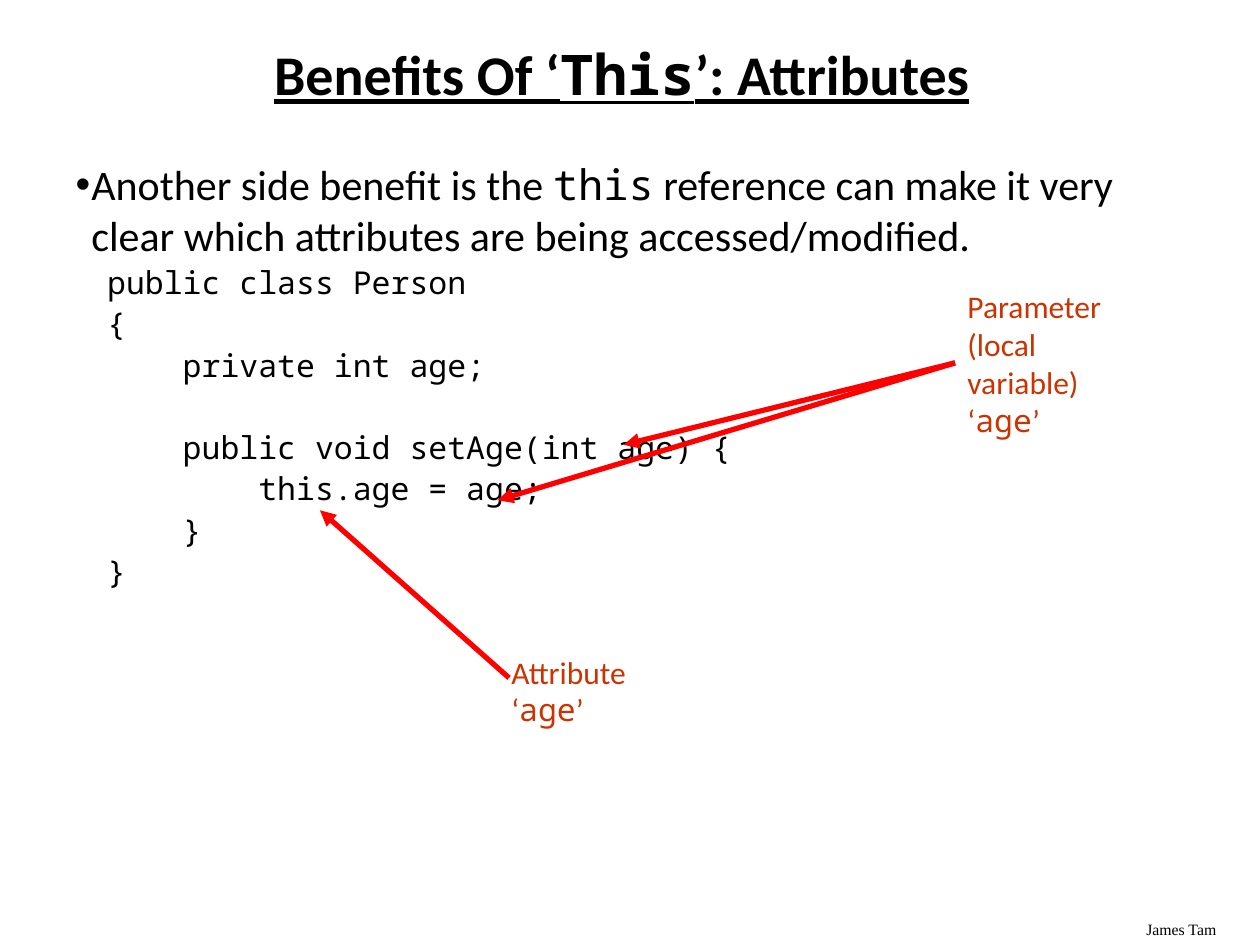
from dataclasses import dataclass

from lxml import etree
from pptx import Presentation
from pptx.dml.color import RGBColor
from pptx.enum import shapes, text
from pptx.oxml import ns
from pptx.util import Pt


@dataclass(frozen=True)
class Theme:
    sans: str = "Calibri"
    mono: str = "Noto Sans Mono"
    serif: str = "Times New Roman"
    ink: str = "000000"
    note: str = "CC3300"
    arrow: str = "FF0000"
    title: int = 32
    body: int = 24
    code: int = 18
    foot: int = 9


@dataclass(frozen=True)
class Box:
    x: float
    y: float
    w: float
    h: float


@dataclass(frozen=True)
class Label:
    text: str
    box: Box
    font: str
    size: int
    color: str


@dataclass(frozen=True)
class Arrow:
    x: float
    y: float
    tip_x: float
    tip_y: float


@dataclass(frozen=True)
class Code:
    text: str
    depth: int = 0
    gap: float = 2


THEME = Theme()
TAB = 43.2
HUB = (545.76, 207.36)

CODE = [
    Code("public class Person"),
    Code("{"),
    Code("private int age;", 1),
    Code("public void setAge(int age) {", 1, 25.5),
    Code("this.age = age;", 2),
    Code("}", 1),
    Code("}"),
]
LABELS = [
    Label("James Tam", Box(648, 522, 72, 18), THEME.serif, THEME.foot, THEME.ink),
    Label("Parameter (local variable) ‘`age`’", Box(545.76, 160.56, 120, 93.6),
          THEME.sans, THEME.code, THEME.note),
    Label("Attribute ‘`age`’", Box(285.12, 369.36, 120, 50.4),
          THEME.sans, THEME.code, THEME.note),
]
ARROWS = [
    Arrow(*HUB, 356.4, 254.16),
    Arrow(*HUB, 284.4, 285.84),
    Arrow(290.88, 387.36, 182.88, 291.6),
]


def write(para, words: str, *, size: int, font: str = THEME.sans,
          color: str = THEME.ink, bold: bool = False, under: bool = False,
          gap: float = 0) -> None:
    para.space_before = Pt(gap)
    for i, part in enumerate(words.split("`")):
        if part:
            run = para.add_run()
            run.text = part
            face = run.font
            face.name = THEME.mono if i % 2 else font
            face.size = Pt(size)
            face.bold = bold
            face.underline = under
            face.color.rgb = RGBColor.from_string(color)


def place(shape, box: Box) -> None:
    shape.left, shape.top = Pt(box.x), Pt(box.y)
    shape.width, shape.height = Pt(box.w), Pt(box.h)
    shape.text_frame.auto_size = text.MSO_AUTO_SIZE.NONE
    shape.text_frame.word_wrap = True


def dent(para, left: float, first: float, plain: bool = False) -> None:
    props = para._p.get_or_add_pPr()
    props.set("marL", str(int(Pt(left))))
    props.set("indent", str(int(Pt(first))))
    if plain:
        etree.SubElement(props, ns.qn("a:buNone"))


def draw_title(shape) -> None:
    place(shape, Box(33.84, 23.76, 642.96, 41.04))
    shape.text_frame.vertical_anchor = text.MSO_ANCHOR.MIDDLE
    para = shape.text_frame.paragraphs[0]
    para.alignment = text.PP_ALIGN.CENTER
    para.line_spacing = 0.9
    write(para, "Benefits Of ‘`This`’: Attributes", size=THEME.title,
          bold=True, under=True)


def draw_body(shape) -> None:
    place(shape, Box(36, 87.12, 643.68, 422.64))
    frame = shape.text_frame
    lead = frame.paragraphs[0]
    write(lead, "Another side benefit is the `this` reference can make it very "
          "clear which attributes are being accessed/modified.",
          size=THEME.body, gap=7)
    dent(lead, 9, -9)
    for line in CODE:
        para = frame.add_paragraph()
        para.level = 1
        write(para, line.text, size=THEME.code, font=THEME.mono, gap=line.gap)
        dent(para, 27 + TAB * line.depth, -9, plain=True)


def draw_label(slide, label: Label) -> None:
    shape = slide.shapes.add_textbox(0, 0, 0, 0)
    place(shape, label.box)
    write(shape.text_frame.paragraphs[0], label.text, size=label.size,
          font=label.font, color=label.color)


def draw_arrow(slide, arrow: Arrow) -> None:
    line = slide.shapes.add_connector(
        shapes.MSO_CONNECTOR.STRAIGHT, Pt(arrow.x), Pt(arrow.y),
        Pt(arrow.tip_x), Pt(arrow.tip_y))
    line.line.color.rgb = RGBColor.from_string(THEME.arrow)
    line.line.width = Pt(3)
    etree.SubElement(line.line._get_or_add_ln(), ns.qn("a:tailEnd"), type="triangle")
    etree.SubElement(line._element.spPr, ns.qn("a:effectLst"))


def main() -> None:
    deck = Presentation()
    deck.slide_width, deck.slide_height = Pt(720), Pt(540)
    slide = deck.slides.add_slide(deck.slide_layouts[1])
    draw_title(slide.shapes.title)
    draw_body(slide.placeholders[1])
    for label in LABELS:
        draw_label(slide, label)
    for arrow in ARROWS:
        draw_arrow(slide, arrow)
    deck.save("out.pptx")


if __name__ == "__main__":
    main()
